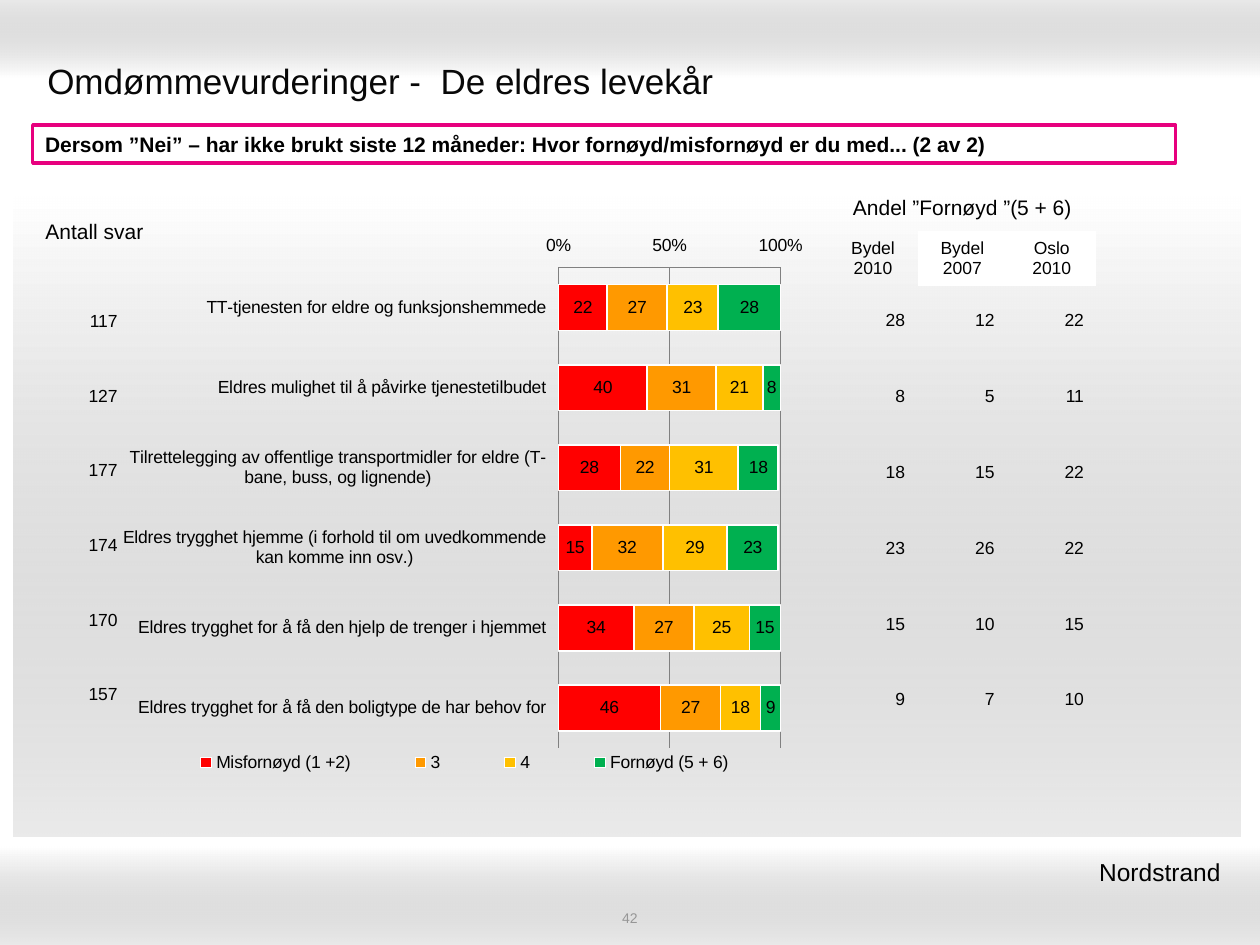
import pptx
import pptx.chart.data
import pptx.dml.color
import pptx.enum.chart
import pptx.enum.shapes
import pptx.enum.text
import pptx.oxml
import pptx.oxml.ns
import pptx.util

Pt = pptx.util.Pt
ALIGN = pptx.enum.text.PP_ALIGN
MIDDLE = pptx.enum.text.MSO_ANCHOR.MIDDLE
RECTANGLE = pptx.enum.shapes.MSO_SHAPE.RECTANGLE
NO_STYLE = "{2D5ABB26-0587-4C30-8999-92F81FD0307C}"
rgb = pptx.dml.color.RGBColor.from_string


def write_text(text_frame, text, size, align=ALIGN.LEFT, color="000000", bold=False):
    """Write one paragraph with one run for each line of text."""
    text_frame.word_wrap = True
    for number, line in enumerate(text.split("\n")):
        paragraph = text_frame.add_paragraph() if number else text_frame.paragraphs[0]
        paragraph.alignment = align
        run = paragraph.add_run()
        run.text = line
        run.font.name = "Arial"
        run.font.size = Pt(size)
        run.font.bold = bold
        run.font.color.rgb = rgb(color)


def add_plain_table(left, top, column_width, row_heights, rows, align, sizes):
    """Add a table without borders or fills; sizes gives the font size of each row."""
    column_count = len(rows[0])
    frame = slide.shapes.add_table(len(rows), column_count, Pt(left), Pt(top),
                                   Pt(column_width * column_count), Pt(sum(row_heights)))
    table = frame.table
    table.first_row = table.horz_banding = False
    table._tbl.tblPr.find(pptx.oxml.ns.qn("a:tableStyleId")).text = NO_STYLE
    for column in table.columns:
        column.width = Pt(column_width)
    for row, height, values, size in zip(table.rows, row_heights, rows, sizes):
        row.height = Pt(height)
        for cell, value in zip(row.cells, values):
            cell.fill.background()
            cell.vertical_anchor = MIDDLE
            if value:
                write_text(cell.text_frame, value, size, align)
    return table


presentation = pptx.Presentation()
presentation.slide_width, presentation.slide_height = Pt(720), Pt(540)
slide = presentation.slides.add_slide(presentation.slide_layouts[5])

# Title
title = slide.shapes.title
title.left, title.top, title.width, title.height = Pt(19.8), Pt(26), Pt(680), Pt(39.6)
title.text_frame.vertical_anchor = MIDDLE
write_text(title.text_frame, "Omdømmevurderinger -  De eldres levekår", 20, color="080808")

# Shaded bands and panel, placed behind the title
bands = [
    (0, 0, 720, 44.6, 90),
    (0, 484, 720, 56, 270),
    (7.8, 112.3, 701.3, 365.7, 270),
]
for position, (left, top, width, height, angle) in enumerate(bands):
    band = slide.shapes.add_shape(RECTANGLE, Pt(left), Pt(top), Pt(width), Pt(height))
    band.shadow.inherit = False
    band.line.fill.background()
    band.fill.gradient()
    band.fill.gradient_angle = angle
    for stop, color in zip(band.fill.gradient_stops, ("FFFFFF", "999999")):
        stop.color.rgb = rgb(color)
    gray = band._element.spPr.findall(".//" + pptx.oxml.ns.qn("a:srgbClr"))[1]
    gray.append(pptx.oxml.parse_xml(
        f'<a:alpha {pptx.oxml.ns.nsdecls("a")} val="20000"/>'))
    slide.shapes._spTree.insert(2 + position, band._element)

# Slide number
number_box = slide.shapes.add_textbox(Pt(246), Pt(519.6), Pt(228), Pt(10))
number_box.text_frame.margin_top = number_box.text_frame.margin_bottom = 0
number_box.text_frame.vertical_anchor = MIDDLE
write_text(number_box.text_frame, "42", 8, ALIGN.CENTER, "969696")

# Question box
question = slide.shapes.add_shape(RECTANGLE, Pt(18.7), Pt(71.3), Pt(653), Pt(21.8))
question.shadow.inherit = False
question.fill.solid()
question.fill.fore_color.rgb = rgb("FFFFFF")
question.line.color.rgb = rgb("E7007E")
question.line.width = Pt(2)
question.text_frame.vertical_anchor = MIDDLE
write_text(question.text_frame,
           "Dersom ”Nei” – har ikke brukt siste 12 måneder: "
           "Hvor fornøyd/misfornøyd er du med... (2 av 2)", 12, bold=True)

# Stacked bar chart
chart_data = pptx.chart.data.CategoryChartData()
chart_data.categories = [
    "TT-tjenesten for eldre og funksjonshemmede",
    "Eldres mulighet til å påvirke tjenestetilbudet",
    "Tilrettelegging av offentlige transportmidler for eldre (T-bane, buss, og lignende)",
    "Eldres trygghet hjemme (i forhold til om uvedkommende kan komme inn osv.)",
    "Eldres trygghet for å få den hjelp de trenger i hjemmet",
    "Eldres trygghet for å få den boligtype de har behov for",
]
answers = [
    ("Misfornøyd (1 +2)", (22, 40, 28, 15, 34, 46), "FF0000"),
    ("3", (27, 31, 22, 32, 27, 27), "FF9900"),
    ("4", (23, 21, 31, 29, 25, 18), "FFC000"),
    ("Fornøyd (5 + 6)", (28, 8, 18, 23, 15, 9), "00B050"),
]
for name, values, color in answers:
    chart_data.add_series(name, values)
chart = slide.shapes.add_chart(
    pptx.enum.chart.XL_CHART_TYPE.BAR_STACKED,
    Pt(69.2), Pt(130), Pt(396.7), Pt(326.9), chart_data).chart
chart.has_title = False
chart.font.name = "Arial"
chart.font.size = Pt(10)
chart.font.color.rgb = rgb("000000")

plot = chart.plots[0]
plot.gap_width, plot.overlap = 75, 100
plot.vary_by_categories = False
for series, (name, values, color) in zip(plot.series, answers):
    series.format.fill.solid()
    series.format.fill.fore_color.rgb = rgb(color)
    series.format.line.color.rgb = rgb("FFFFFF")
    series.format.line.width = Pt(1)
    labels = series.data_labels
    labels.show_value = True
    labels.number_format, labels.number_format_is_linked = "0", False

category_axis, value_axis = chart.category_axis, chart.value_axis
category_axis.reverse_order = True
category_axis.major_tick_mark = pptx.enum.chart.XL_TICK_MARK.NONE
value_axis.major_tick_mark = pptx.enum.chart.XL_TICK_MARK.INSIDE
value_axis.minimum_scale, value_axis.maximum_scale, value_axis.major_unit = 0, 100, 50
value_axis.tick_labels.number_format = "General\\%"
value_axis.tick_labels.number_format_is_linked = False
for axis in (category_axis, value_axis):
    axis.tick_label_position = pptx.enum.chart.XL_TICK_LABEL_POSITION.LOW
    axis.tick_labels.font.size = Pt(10)
    axis.format.line.color.rgb = rgb("808080")
value_axis.major_gridlines.format.line.color.rgb = rgb("808080")

# Level category labels, so that long ones wrap
label_body = category_axis._element.find(".//" + pptx.oxml.ns.qn("a:bodyPr"))
label_body.set("rot", "0")
label_body.set("vert", "horz")

chart.has_legend = True
chart.legend.position = pptx.enum.chart.XL_LEGEND_POSITION.BOTTOM
chart.legend.include_in_layout = False

# Fixed places for the plot area and the legend, as shares of the chart
plot_area = chart._chartSpace.chart.plotArea
legend_element = chart.legend._element
layouts = [
    (plot_area, 0, '<c:layoutTarget val="inner"/>', (0.63, 0.07, 0.32, 0.84)),
    (legend_element, 1, "", (0.03, 0.91, 0.93, 0.05)),
]
for element, position, target, shares in layouts:
    for old_layout in element.findall(pptx.oxml.ns.qn("c:layout")):
        element.remove(old_layout)
    sizes = "".join(f'<c:{key} val="{share}"/>' for key, share in zip("xywh", shares))
    element.insert(position, pptx.oxml.parse_xml(
        f'<c:layout {pptx.oxml.ns.nsdecls("c")}><c:manualLayout>{target}'
        f'<c:xMode val="edge"/><c:yMode val="edge"/>{sizes}</c:manualLayout></c:layout>'))

# Share of satisfied answers
satisfied = [
    ("28", "12", "22"), ("8", "5", "11"), ("18", "15", "22"),
    ("23", "26", "22"), ("15", "10", "15"), ("9", "7", "10"),
]
add_plain_table(473.3, 161.3, 51.1, [43.4] * 6, satisfied, ALIGN.RIGHT, [10] * 6)

# Headings above the shares
headings = [("Andel ”Fornøyd ”(5 + 6)", "", ""),
            ("Bydel\n2010", "Bydel\n2007", "Oslo\n2010")]
heading_table = add_plain_table(473.3, 105.8, 51.1, [26.2, 31.4], headings,
                                ALIGN.CENTER, [12, 10])
heading_table.cell(0, 0).merge(heading_table.cell(0, 2))
for column in (1, 2):
    cell = heading_table.cell(1, column)
    cell.fill.solid()
    cell.fill.fore_color.rgb = rgb("FFFFFF")

# Number of answers
counts = [("117",), ("127",), ("177",), ("174",), ("170",), ("157",)]
add_plain_table(37, 162.3, 37.4, [42.7] * 6, counts, ALIGN.RIGHT, [10] * 6)
add_plain_table(2.9, 111.2, 102.2, [42.5], [("Antall svar",)], ALIGN.CENTER, [12])

# District name
district = slide.shapes.add_textbox(Pt(439), Pt(486), Pt(269.5), Pt(24.5))
write_text(district.text_frame, "Nordstrand ", 14, ALIGN.RIGHT)

presentation.save("out.pptx")
